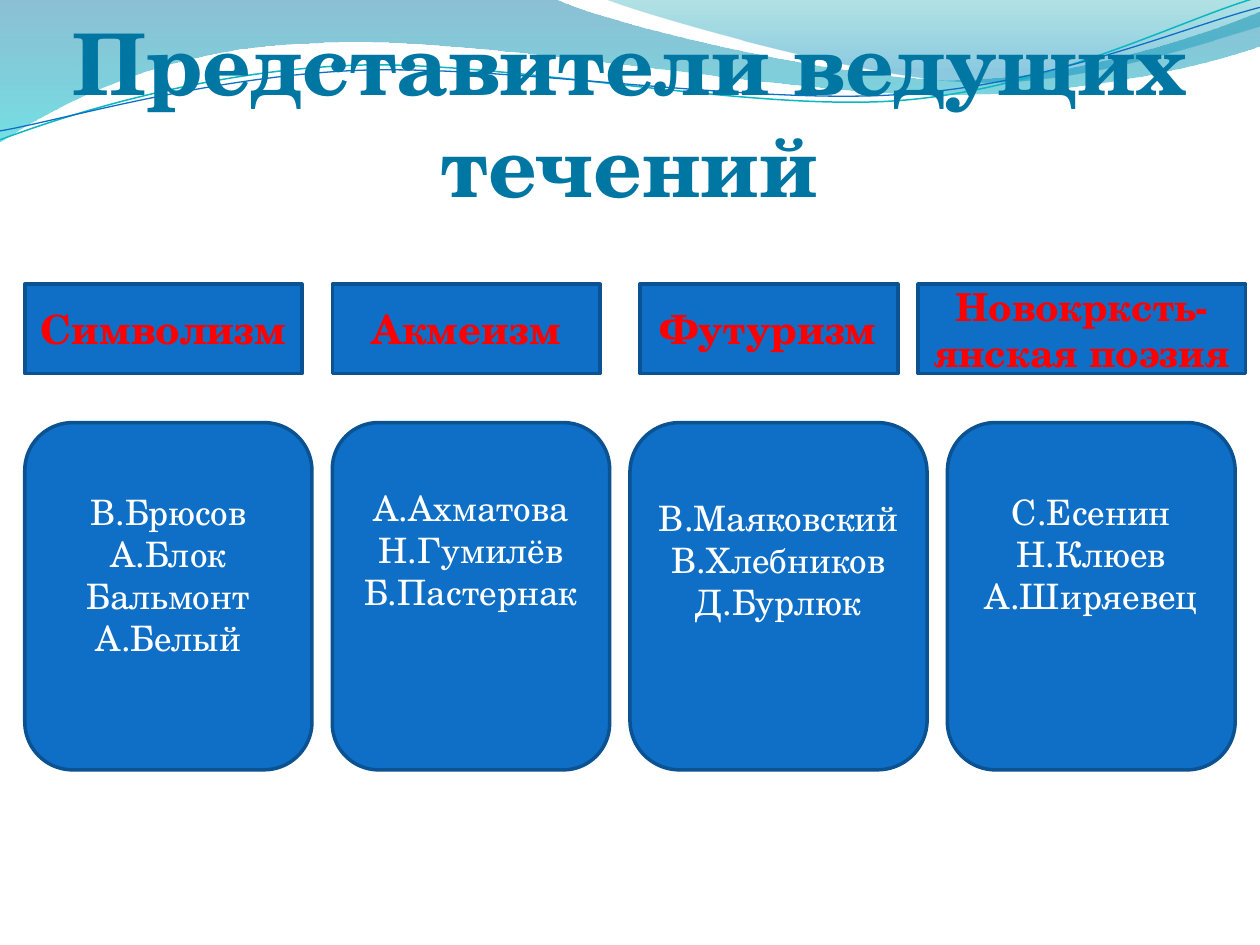
from lxml import etree
from pptx import Presentation
from pptx.dml.color import RGBColor
from pptx.enum.shapes import MSO_SHAPE
from pptx.enum.text import MSO_ANCHOR, MSO_AUTO_SIZE, PP_ALIGN
from pptx.oxml.ns import qn
from pptx.util import Cm, Pt

RECT, ROUND = MSO_SHAPE.RECTANGLE, MSO_SHAPE.ROUNDED_RECTANGLE
TOP, MIDDLE, BOTTOM = MSO_ANCHOR.TOP, MSO_ANCHOR.MIDDLE, MSO_ANCHOR.BOTTOM
CENTER = PP_ALIGN.CENTER
FIXED = MSO_AUTO_SIZE.NONE
FONT = "TeX Gyre Schola"
HEX = {
    "title": "0076A3", "box": "0F6FC6", "edge": "0B5292",
    "head": "FF0000", "name": "FFFFFF", "teal": "0AB8BF",
    "deep": "0074A1", "aqua": "00C6CF", "sea": "00A1A9", "sky": "008BBF",
}
RGB = {key: RGBColor.from_string(value) for key, value in HEX.items()}


def write(frame, text, size=20, color="name", bold=False, anchor=MIDDLE):
    frame.word_wrap = True
    frame.auto_size = FIXED
    frame.vertical_anchor = anchor
    frame.text = text
    for para in frame.paragraphs:
        para.alignment = CENTER
        for run in para.runs:
            font = run.font
            font.name, font.size, font.bold = FONT, Pt(size), bold
            font.color.rgb = RGB[color]


def wave(start, parts, close):
    points = [(Cm(x), Cm(y)) for part in parts
              for x, y in zip(part[::2], part[1::2])]
    path = slide.shapes.build_freeform(Cm(start[0]), Cm(start[1]))
    path.add_line_segments(points, close=close)
    shape = path.convert_to_shape()
    shape.shadow.inherit = False
    lines = iter(list(shape.element.iter(qn("a:lnTo"))))
    for part in parts:
        first = next(lines)
        if len(part) == 6:
            first.tag_name = None
            bend = etree.Element(qn("a:cubicBezTo"))
            first.addprevious(bend)
            for line in (first, next(lines), next(lines)):
                bend.append(line[0])
                line.getparent().remove(line)
    return shape


deck = Presentation()
deck.slide_width, deck.slide_height = Cm(25.4), Cm(19.05)
slide = deck.slides.add_slide(deck.slide_layouts[5])

bands = [
    ((0, 0), [
        (11.18, -0.03),
        (12.09, 0.43, 16.87, 1.6, 19.25, 1.6),
        (21.67, 1.6, 24.33, 0.66, 25.4, 0.23),
        (25.43, 0.91),
        (24.97, 1.12, 22.1, 1.93, 18.95, 1.91),
        (15.8, 1.91, 9.7, 0.71, 6.53, 0.86),
        (3.28, 0.91, 1.17, 2.11, -0.03, 2.87),
    ], [("deep", 0, 45), ("aqua", 1, 55)]),
    ((12.17, -0.03), [
        (12.93, 0.28, 17.32, 1.57, 19.53, 1.65),
        (21.74, 1.75, 24.41, 0.81, 25.4, 0.53),
        (25.4, 0),
    ], [("sea", 0, 30), ("sky", 0.8, 45)]),
]
for start, parts, stops in bands:
    band = wave(start, parts, True)
    band.line.fill.background()
    band.fill.gradient()
    band.fill.gradient_angle = 270
    for stop, (color, place, _) in zip(band.fill.gradient_stops, stops):
        stop.color.rgb = RGB[color]
        stop.position = place
    tints = band.element.spPr.iter(qn("a:srgbClr"))
    for tint, (_, _, alpha) in zip(tints, stops):
        etree.SubElement(tint, qn("a:alpha")).set("val", str(alpha * 1000))

curves = [
    ((0, 2.82), [
        (1.22, 2.36, 4.01, 1.45, 7.04, 1.32),
        (10.03, 1.19, 15.06, 2.26, 18.11, 2.03),
        (21.16, 1.8, 23.83, 0.38, 25.35, -0.05),
    ], "teal", 0.85),
    ((0, 2.64), [
        (1.19, 2.44, 4.17, 1.55, 7.19, 1.42),
        (10.24, 1.3, 15.16, 2.13, 18.21, 1.9),
        (21.23, 1.7, 23.9, 0.53, 25.4, 0.15),
    ], "box", 0.75),
]
for start, parts, color, width in curves:
    curve = wave(start, parts, False)
    curve.fill.background()
    curve.line.color.rgb = RGB[color]
    curve.line.width = Pt(width)

title = slide.shapes.title
title.left, title.top = Cm(1.27), Cm(0.72)
title.width, title.height = Cm(22.86), Cm(3.6)
frame = title.text_frame
write(frame, "Представители ведущих течений", size=48.6, color="title",
      bold=True, anchor=BOTTOM)
frame.margin_left = frame.margin_right = frame.margin_bottom = 0
title.element.getparent().append(title.element)

lists = [
    (0.5, 5.79, 1.09, ["В.Брюсов", "А.Блок", "Бальмонт", "А.Белый"]),
    (6.7, 5.59, 1.02, ["А.Ахматова", "Н.Гумилёв", "Б.Пастернак"]),
    (12.7, 5.99, 1.2, ["В.Маяковский", "В.Хлебников", "Д.Бурлюк"]),
    (19.1, 5.8, 1.09, ["С.Есенин", "Н.Клюев", "А.Ширяевец"]),
]
heads = [
    (0.5, 5.59, 23, "Символизм"),
    (6.7, 5.4, 23, "Акмеизм"),
    (12.9, 5.2, 23, "Футуризм"),
    (18.51, 6.6, 22, "Новокрксть-янская поэзия"),
]
boxes = []
for left, width, inset, names in lists:
    box = slide.shapes.add_shape(ROUND, Cm(left), Cm(8.52), Cm(width), Cm(7))
    write(box.text_frame, "\n".join(names), anchor=TOP)
    box.text_frame.margin_top = Cm(inset)
    boxes.append(box)
for left, width, size, text in heads:
    box = slide.shapes.add_shape(RECT, Cm(left), Cm(5.73), Cm(width), Cm(1.8))
    write(box.text_frame, text, size=size, color="head", bold=True)
    boxes.append(box)
for box in boxes:
    box.shadow.inherit = False
    box.fill.solid()
    box.fill.fore_color.rgb = RGB["box"]
    box.line.color.rgb = RGB["edge"]
    box.line.width = Pt(2)

deck.save("out.pptx")
